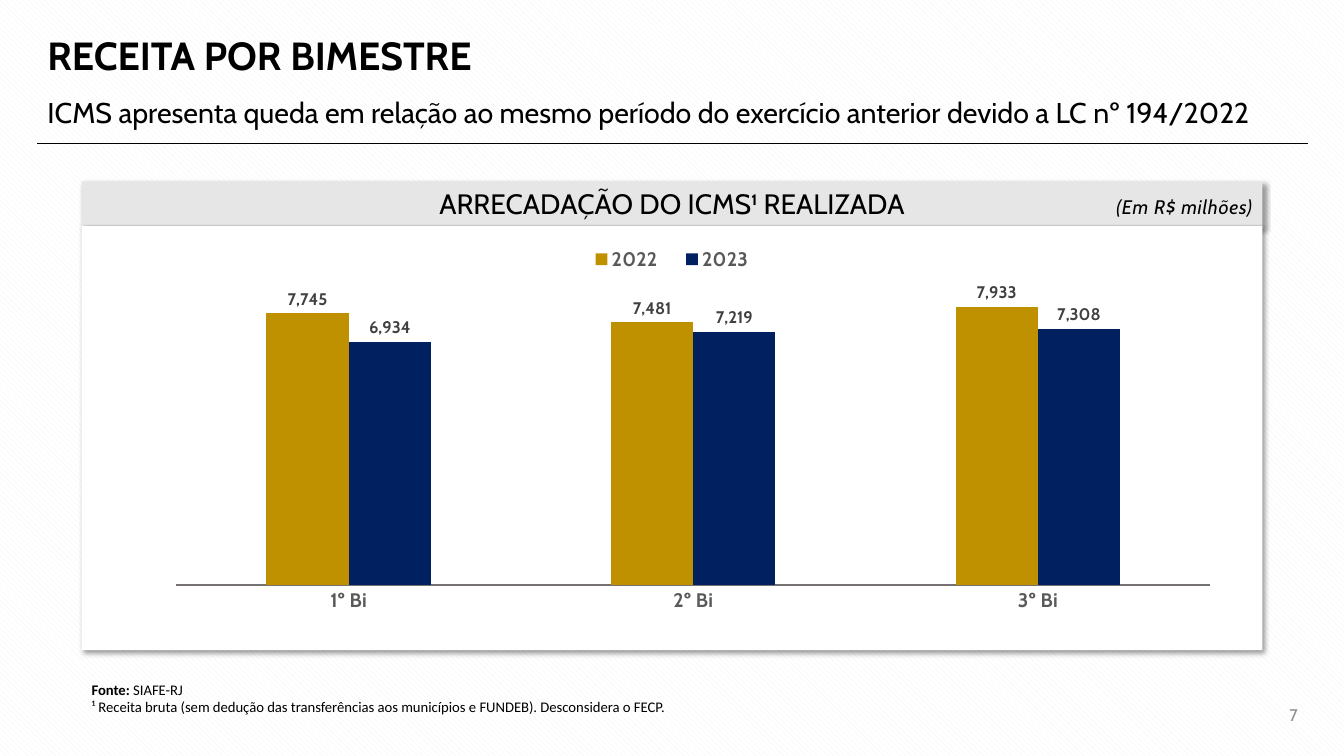
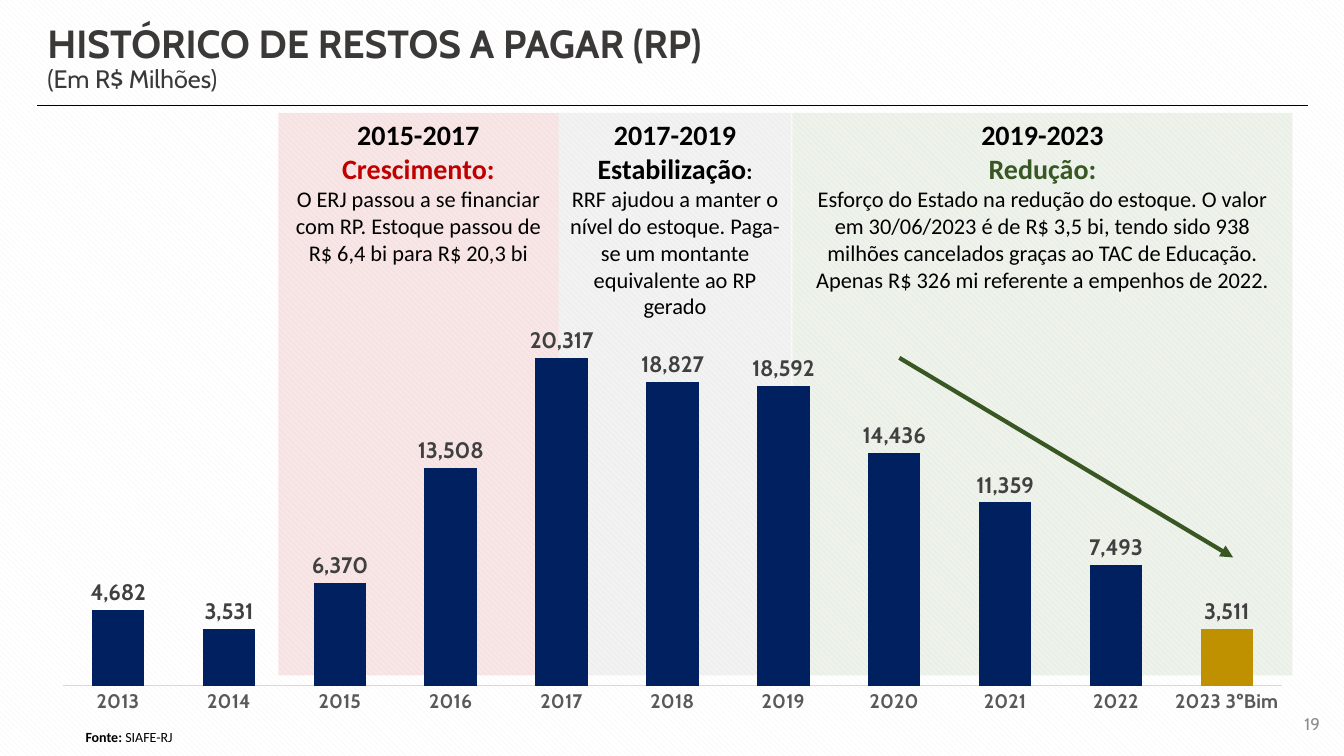
from dataclasses import dataclass
from typing import Optional

from lxml import etree
from pptx import Presentation
from pptx.chart.data import CategoryChartData
from pptx.dml.color import RGBColor
from pptx.enum.chart import XL_CHART_TYPE, XL_LABEL_POSITION, XL_LEGEND_POSITION, XL_TICK_MARK
from pptx.enum.dml import MSO_PATTERN
from pptx.enum.shapes import MSO_CONNECTOR, MSO_SHAPE
from pptx.enum.text import MSO_ANCHOR, MSO_AUTO_SIZE, PP_ALIGN
from pptx.oxml.ns import qn
from pptx.util import Inches, Pt

COLUMNS = XL_CHART_TYPE.COLUMN_CLUSTERED
LABEL_OUTSIDE = XL_LABEL_POSITION.OUTSIDE_END
LEGEND_TOP = XL_LEGEND_POSITION.TOP
NO_TICK = XL_TICK_MARK.NONE
DIAGONAL = MSO_PATTERN.WIDE_DOWNWARD_DIAGONAL
STRAIGHT = MSO_CONNECTOR.STRAIGHT
RECTANGLE = MSO_SHAPE.RECTANGLE
TOP, MIDDLE = MSO_ANCHOR.TOP, MSO_ANCHOR.MIDDLE
LEFT, CENTER, RIGHT = PP_ALIGN.LEFT, PP_ALIGN.CENTER, PP_ALIGN.RIGHT
NO_AUTOFIT = MSO_AUTO_SIZE.NONE

HEADING_FONT, BODY_FONT = "Cabin", "Calibri"
COLORS = {
    "black": "000000", "white": "FFFFFF", "stripe": "F2F2F2", "title": "3B3838",
    "page": "8C8C8C", "header": "E7E6E6", "axis_text": "595959", "label": "404040",
    "axis_dark": "767171", "axis_light": "D9D9D9", "gold": "BF9000", "navy": "002060",
    "red": "C00000", "gray": "808080", "green": "548235", "dark_green": "385723",
}
MARGIN, CONTENT_WIDTH = 0.37, 12.6
PANEL_LEFT, PANEL_WIDTH = 0.81, 11.71
BAND_TOP, BAND_HEIGHT = 1.12, 5.58


@dataclass(frozen=True)
class Frame:
    """Left, top, width and height: inches on a slide, fractions in a chart."""
    left: float
    top: float
    width: float
    height: float

    def lengths(self) -> list:
        return [Inches(value) for value in (self.left, self.top, self.width, self.height)]


@dataclass(frozen=True)
class Span:
    text: str
    size: float
    color: str = "black"
    bold: bool = False
    italic: bool = False
    font: str = HEADING_FONT
    spacing: float = 0
    ends_line: bool = False


@dataclass(frozen=True)
class Series:
    name: str
    values: tuple
    color: str


@dataclass(frozen=True)
class ColumnChart:
    frame: Frame
    plot: Frame
    categories: tuple
    series: tuple
    number_format: str
    maximum: float
    gap: int
    overlap: int
    label_size: float
    axis_color: str
    axis_width: float
    legend: Optional[Frame] = None


@dataclass(frozen=True)
class Period:
    years: str
    left: float
    right: float
    fill: str
    heading: tuple
    text: str


def rgb(name: str) -> RGBColor:
    return RGBColor.from_string(COLORS[name])


def style_font(font, size: float, color: str, bold: bool = False, name: str = HEADING_FONT) -> None:
    font.name, font.size, font.bold = name, Pt(size), bold
    font.color.rgb = rgb(color)


def write(shape, paragraphs: list, align=LEFT, anchor=TOP, line_spacing: float = 1.0) -> None:
    """Fill a shape with paragraphs, each given as a list of spans."""
    frame = shape.text_frame
    frame.word_wrap, frame.auto_size, frame.vertical_anchor = True, NO_AUTOFIT, anchor
    for index, spans in enumerate(paragraphs):
        para = frame.paragraphs[0] if index == 0 else frame.add_paragraph()
        para.alignment, para.line_spacing, para.space_before = align, line_spacing, Pt(0)
        for span in spans:
            run = para.add_run()
            run.text = span.text
            style_font(run.font, span.size, span.color, span.bold, span.font)
            run.font.italic = span.italic
            if span.spacing:
                run.font._element.set("spc", str(int(span.spacing * 100)))
            if span.ends_line:
                para.add_line_break()


def place(shape, frame: Frame) -> None:
    shape.left, shape.top, shape.width, shape.height = frame.lengths()


def add_text(page, frame: Frame, paragraphs: list, **options) -> None:
    write(page.shapes.add_textbox(*frame.lengths()), paragraphs, **options)


def add_rectangle(page, frame: Frame, fill: str, opacity: int = 100):
    box = page.shapes.add_shape(RECTANGLE, *frame.lengths())
    box.shadow.inherit = False
    box.fill.solid()
    box.fill.fore_color.rgb = rgb(fill)
    box.line.fill.background()
    if opacity < 100:
        color = box._element.spPr.find(qn("a:solidFill"))[0]
        etree.SubElement(color, qn("a:alpha"), val=str(opacity * 1000))
    return box


def add_shadow(box) -> None:
    effects = box._element.spPr.find(qn("a:effectLst"))
    shadow = etree.SubElement(effects, qn("a:outerShdw"), blurRad=str(Pt(4)), dist=str(Pt(3)),
                              dir=str(45 * 60000), algn="tl", rotWithShape="0")
    color = etree.SubElement(shadow, qn("a:srgbClr"), val=COLORS["black"])
    etree.SubElement(color, qn("a:alpha"), val="40000")


def add_line(page, start: tuple, end: tuple, color: str, width: float, arrow: bool = False) -> None:
    line = page.shapes.add_connector(STRAIGHT, *[Inches(value) for value in start + end])
    line.line.color.rgb = rgb(color)
    line.line.width = Pt(width)
    if arrow:
        etree.SubElement(line.line._get_or_add_ln(), qn("a:tailEnd"), type="triangle")
    etree.SubElement(line._element.spPr, qn("a:effectLst"))


def set_layout(parent, position: int, frame: Frame, inner: bool = False) -> None:
    """Give a chart part a manual layout, as the child at the given position."""
    for old in parent.findall(qn("c:layout")):
        parent.remove(old)
    layout = etree.Element(qn("c:layout"))
    manual = etree.SubElement(layout, qn("c:manualLayout"))
    settings = [("layoutTarget", "inner")] if inner else []
    settings += [("xMode", "edge"), ("yMode", "edge"), ("x", frame.left), ("y", frame.top),
                 ("w", frame.width), ("h", frame.height)]
    for tag, value in settings:
        etree.SubElement(manual, qn(f"c:{tag}"), val=str(value))
    parent.insert(position, layout)


def add_columns(page, design: ColumnChart):
    data = CategoryChartData(number_format=design.number_format)
    data.categories = design.categories
    for item in design.series:
        data.add_series(item.name, item.values)
    chart = page.shapes.add_chart(COLUMNS, *design.frame.lengths(), data).chart
    chart.has_title = False
    style_font(chart.font, 10, "black")
    set_layout(chart._chartSpace.chart.plotArea, 0, design.plot, inner=True)

    values = chart.value_axis
    values.visible = values.has_major_gridlines = False
    values.minimum_scale, values.maximum_scale = 0, design.maximum
    axis = chart.category_axis
    axis.major_tick_mark = axis.minor_tick_mark = NO_TICK
    style_font(axis.tick_labels.font, 14, "axis_text", bold=True)
    axis.format.line.color.rgb = rgb(design.axis_color)
    axis.format.line.width = Pt(design.axis_width)

    plot = chart.plots[0]
    plot.gap_width, plot.overlap, plot.vary_by_categories = design.gap, design.overlap, False
    for item, columns in zip(design.series, plot.series):
        columns.format.fill.solid()
        columns.format.fill.fore_color.rgb = rgb(item.color)
        labels = columns.data_labels
        labels.show_value, labels.position = True, LABEL_OUTSIDE
        labels.number_format, labels.number_format_is_linked = design.number_format, False
        style_font(labels.font, design.label_size, "label", bold=True)

    chart.has_legend = design.legend is not None
    if design.legend:
        chart.legend.position = LEGEND_TOP
        chart.legend.include_in_layout = False
        style_font(chart.legend.font, 14, "axis_text", bold=True)
        set_layout(chart.legend._element, 1, design.legend)
    return chart


def add_page(deck, layout: int, title: list, title_top: float, rule_top: float,
             number: str, number_at: tuple):
    """Add a slide with its title, rule and page number."""
    page = deck.slides.add_slide(deck.slide_layouts[layout])
    place(page.shapes.title, Frame(MARGIN, title_top, 8.89, 0.79))
    write(page.shapes.title, title, anchor=MIDDLE, line_spacing=0.9)
    add_line(page, (MARGIN, rule_top), (MARGIN + CONTENT_WIDTH, rule_top), "black", 0.5)
    add_text(page, Frame(*number_at, 0.96, 0.4), [[Span(number, 12, "page")]],
             align=RIGHT, anchor=MIDDLE)
    return page


def source_line(size: float) -> list:
    return [Span("Fonte: ", size, bold=True, font=BODY_FONT),
            Span("SIAFE-RJ", size, font=BODY_FONT)]


def build_revenue(deck) -> None:
    page = add_page(deck, 1, [[Span("RECEITA POR BIMESTRE", 28, bold=True)]],
                    0.18, 1.42, "7", (12.01, 6.89))
    subtitle = page.placeholders[1]
    place(subtitle, Frame(MARGIN, 0.8, CONTENT_WIDTH, 0.59))
    properties = subtitle.text_frame.paragraphs[0]._p.get_or_add_pPr()
    properties.set("marL", "0")
    properties.set("indent", "0")
    etree.SubElement(properties, qn("a:buNone"))
    write(subtitle, [[Span("ICMS apresenta queda em relação ao mesmo período do exercício "
                           "anterior devido a LC nº 194/2022", 20.4)]],
          anchor=MIDDLE, line_spacing=1.1)

    header = add_rectangle(page, Frame(PANEL_LEFT, 1.8, PANEL_WIDTH, 0.44), "header")
    write(header, [[Span("ARRECADAÇÃO DO ICMS¹ REALIZADA", 20)]], align=CENTER, anchor=MIDDLE)
    panel = add_rectangle(page, Frame(PANEL_LEFT, 2.24, PANEL_WIDTH, 4.21), "white")
    for box in (header, panel):
        add_shadow(box)
    add_text(page, Frame(10.66, 1.84, 1.86, 0.4),
             [[Span("(Em R$ milhões)", 14, italic=True, spacing=0.5)]],
             align=RIGHT, line_spacing=1.2)
    add_columns(page, ColumnChart(
        Frame(1.24, 2.29, 10.85, 4.04), Frame(0.047, 0.094, 0.945, 0.776),
        ("1º Bi", "2º Bi", "3º Bi"),
        (Series("2022", (7745000000, 7481000000, 7933000000), "gold"),
         Series("2023", (6934000000, 7219000000, 7308000000), "navy")),
        "#,##0,,", 9000000000, 219, 0, 12, "axis_dark", 1.5, Frame(0.41, 0.03, 0.18, 0.08)))
    note = "¹ Receita bruta (sem dedução das transferências aos municípios e FUNDEB). Desconsidera o FECP."
    add_text(page, Frame(PANEL_LEFT, 6.7, 11, 0.45),
             [source_line(10.5), [Span(note, 10.5, font=BODY_FONT)]])


def build_history(deck) -> None:
    title = [[Span("HISTÓRICO DE RESTOS A PAGAR (RP)", 28, "title", bold=True)],
             [Span("(Em R$ Milhões)", 18, "title")]]
    page = add_page(deck, 5, title, 0.19, 1.05, "19", (12.23, 6.98))
    periods = (
        Period("2015-2017", 2.76, 5.54, "red",
               (Span("Crescimento:", 20, "red", True, font=BODY_FONT, ends_line=True),),
               "O ERJ passou a se financiar com RP. Estoque passou de R$ 6,4 bi para R$ 20,3 bi"),
        Period("2017-2019", 5.54, 7.85, "gray",
               (Span("Estabilização", 20, bold=True, font=BODY_FONT),
                Span(":", 16, bold=True, font=BODY_FONT, ends_line=True)),
               "RRF ajudou a manter o nível do estoque. Paga-se um montante equivalente ao RP gerado"),
        Period("2019-2023", 7.86, 12.82, "green",
               (Span("Redução:", 20, "dark_green", True, font=BODY_FONT, ends_line=True),),
               "Esforço do Estado na redução do estoque. O valor em 30/06/2023 é de R$ 3,5 bi, "
               "tendo sido 938 milhões cancelados graças ao TAC de Educação. "
               "Apenas R$ 326 mi referente a empenhos de 2022."),
    )
    for period in periods:
        frame = Frame(period.left, BAND_TOP, period.right - period.left, BAND_HEIGHT)
        band = add_rectangle(page, frame, period.fill, opacity=10)
        write(band, [[Span(period.years, 20, bold=True, font=BODY_FONT)],
                     [*period.heading, Span(period.text, 16, font=BODY_FONT)]], align=CENTER)

    add_text(page, Frame(0.75, 7.18, 5.36, 0.27), [source_line(10)])
    stock = (4682, 3531, 6370, 13508, 20317, 18827, 18592, 14436, 11359, 7493, 3511)
    chart = add_columns(page, ColumnChart(
        Frame(MARGIN, 2.71, CONTENT_WIDTH, 4.47), Frame(0.02, 0.02, 0.96, 0.896),
        (*map(str, range(2013, 2023)), "2023 3ºBim"), (Series("Series 1", stock, "navy"),),
        "#,##0", 25000, 111, 8, 16, "axis_light", 0.75))
    latest = chart.plots[0].series[0].points[len(stock) - 1].format.fill
    latest.solid()
    latest.fore_color.rgb = rgb("gold")
    add_line(page, (8.92, 3.55), (12.23, 5.53), "dark_green", 3, arrow=True)


def main() -> None:
    deck = Presentation()
    deck.slide_width, deck.slide_height = Inches(13.33), Inches(7.5)
    backdrop = deck.slide_master.background.fill
    backdrop.patterned()
    backdrop.pattern = DIAGONAL
    backdrop.fore_color.rgb, backdrop.back_color.rgb = rgb("stripe"), rgb("white")
    build_revenue(deck)
    build_history(deck)
    deck.save("out.pptx")


if __name__ == "__main__":
    main()
